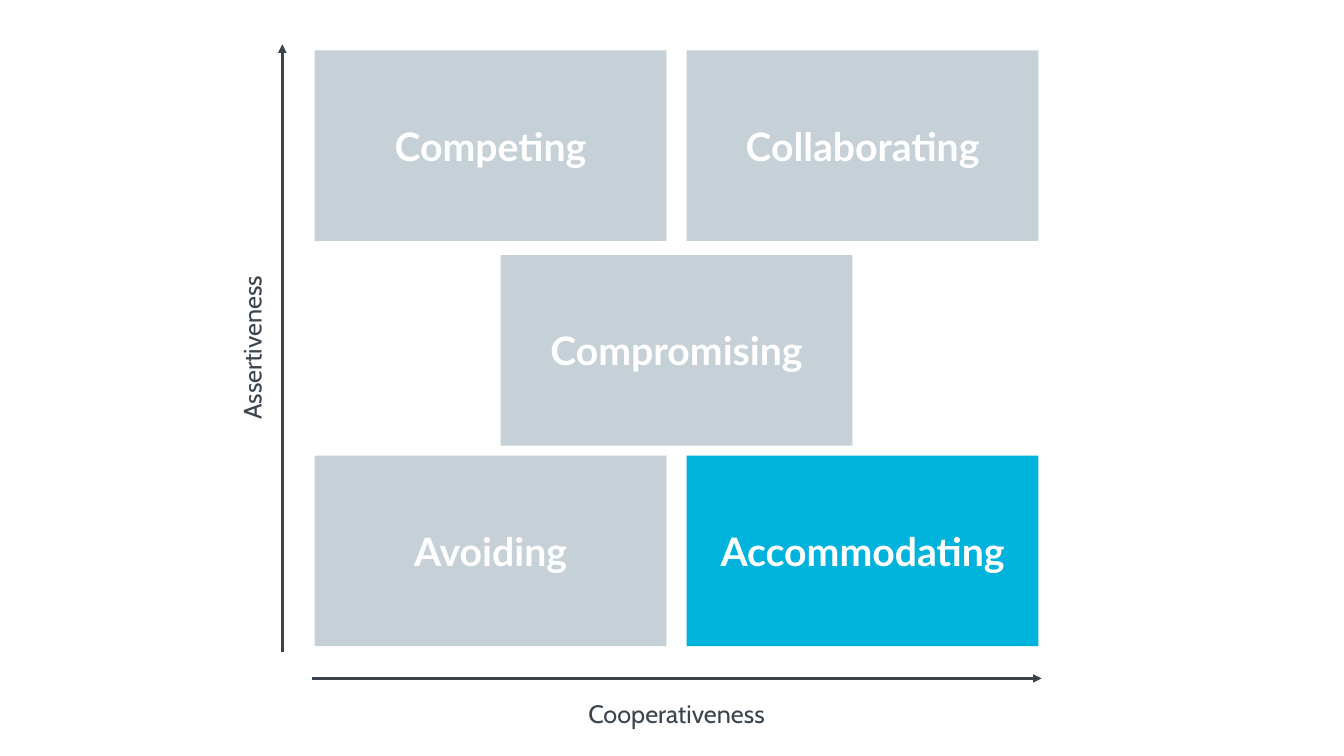
"""Builds a slide of five conflict styles on two axes."""
from dataclasses import dataclass

from lxml import etree
from pptx import Presentation
from pptx.dml.color import RGBColor
from pptx.enum.shapes import MSO_CONNECTOR, MSO_SHAPE
from pptx.enum.text import MSO_ANCHOR, MSO_AUTO_SIZE, PP_ALIGN
from pptx.oxml.ns import qn
from pptx.slide import Slide
from pptx.text.text import TextFrame
from pptx.util import Inches, Pt

RECT = MSO_SHAPE.RECTANGLE
LINE = MSO_CONNECTOR.STRAIGHT
MIDDLE = MSO_ANCHOR.MIDDLE
GROW = MSO_AUTO_SIZE.SHAPE_TO_FIT_TEXT
CENTER = PP_ALIGN.CENTER

WHITE = RGBColor(0xFF, 0xFF, 0xFF)
GREY = RGBColor(0xC6, 0xD0, 0xD7)
BLUE = RGBColor(0x00, 0xB3, 0xDC)
DARK = RGBColor(0x3B, 0x44, 0x4D)

WIDTH, HEIGHT = 3.49, 1.89
LEFT, RIGHT = 3.12, 6.81
MID = (LEFT + RIGHT) / 2
TOP, CENTRE, BASE = 0.5, 2.53, 4.52


@dataclass
class Style:
    name: str
    left: float
    top: float
    fill: RGBColor = GREY


@dataclass
class Axis:
    name: str
    start: tuple[float, float]
    end: tuple[float, float]
    label: tuple[float, float, float, float]
    turn: float = 0


STYLES = [
    Style("Competing", LEFT, TOP),
    Style("Collaborating", RIGHT, TOP),
    Style("Compromising", MID, CENTRE),
    Style("Avoiding", LEFT, BASE),
    Style("Accommodating", RIGHT, BASE, BLUE),
]
AXES = [
    Axis("Assertiveness", (2.8, 6.47), (2.8, 0.44), (-0.24, 3.25, 5.47, 0.4), 270),
    Axis("Cooperativeness", (3.09, 6.73), (10.33, 6.73), (3.09, 6.88, 7.24, 0.4)),
]


def write(frame: TextFrame, text: str, face: str, size: int,
          color: RGBColor, bold: bool = False) -> None:
    """Put one centred run into a text frame."""
    frame.word_wrap = True
    para = frame.paragraphs[0]
    para.alignment = CENTER
    run = para.add_run()
    run.text = text
    run.font.name = face
    run.font.size = Pt(size)
    run.font.bold = bold
    run.font.color.rgb = color


def draw_style(slide: Slide, style: Style) -> None:
    """Draw one labelled box."""
    box = slide.shapes.add_shape(RECT, Inches(style.left), Inches(style.top),
                                 Inches(WIDTH), Inches(HEIGHT))
    box.shadow.inherit = False
    box.fill.solid()
    box.fill.fore_color.rgb = style.fill
    box.line.fill.background()
    box.text_frame.vertical_anchor = MIDDLE
    write(box.text_frame, style.name, "Lato", 28, WHITE, True)


def draw_axis(slide: Slide, axis: Axis) -> None:
    """Draw one arrow and its label."""
    ends = [Inches(value) for value in axis.start + axis.end]
    arrow = slide.shapes.add_connector(LINE, *ends)
    arrow.line.color.rgb = DARK
    arrow.line.width = Pt(2)
    props = arrow.element.spPr
    etree.SubElement(props.find(qn("a:ln")), qn("a:tailEnd"), type="triangle")
    etree.SubElement(props, qn("a:effectLst"))

    label = slide.shapes.add_textbox(*[Inches(value) for value in axis.label])
    label.rotation = axis.turn
    write(label.text_frame, axis.name, "Cabin", 18, DARK)
    label.text_frame.auto_size = GROW


def main() -> None:
    """Build and save the slide."""
    deck = Presentation()
    deck.slide_width, deck.slide_height = Inches(13.33), Inches(7.5)
    slide = deck.slides.add_slide(deck.slide_layouts[6])
    for style in STYLES:
        draw_style(slide, style)
    for axis in AXES:
        draw_axis(slide, axis)
    deck.save("out.pptx")


if __name__ == "__main__":
    main()
